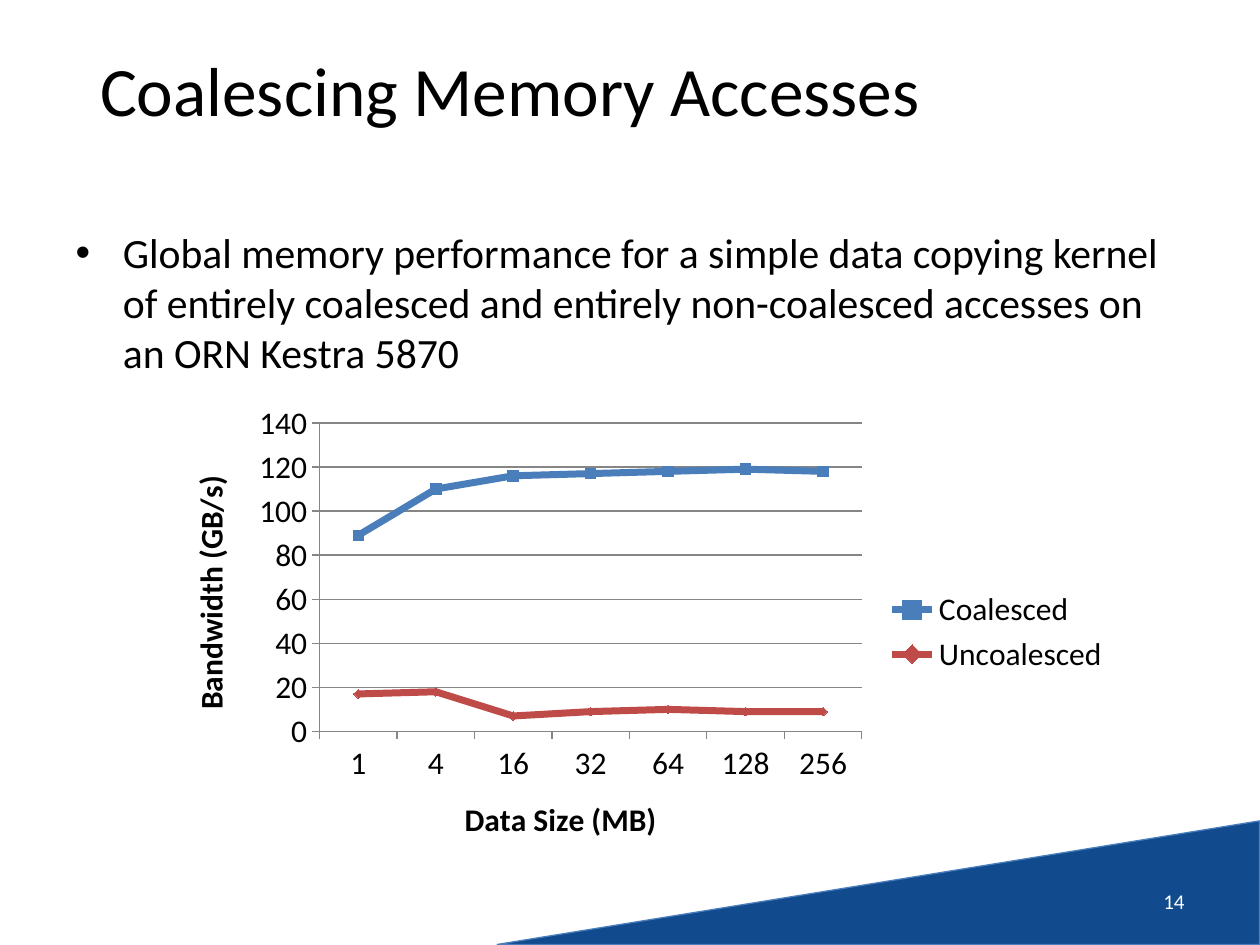
"""Build a slide with a line chart of coalesced and uncoalesced memory bandwidth."""
from lxml import etree
from pptx import Presentation
from pptx.chart.data import CategoryChartData
from pptx.dml.color import RGBColor
from pptx.enum.chart import XL_CHART_TYPE as CT, XL_LEGEND_POSITION as LP
from pptx.enum.chart import XL_MARKER_STYLE as MS, XL_TICK_MARK as TM
from pptx.enum.shapes import MSO_SHAPE
from pptx.enum.text import MSO_ANCHOR, MSO_AUTO_SIZE, PP_ALIGN
from pptx.oxml.ns import qn
from pptx.util import Pt

FONT = "Calibri"
TITLE = "Coalescing Memory Accesses"
BODY = ("Global memory performance for a simple data copying kernel of entirely "
        "coalesced and entirely non-coalesced accesses on an ORN Kestra 5870")
PAGE = "14"
SIZES = ["1", "4", "16", "32", "64", "128", "256"]
SERIES = [
    ("Coalesced", [89, 110, 116, 117, 118, 119, 118], "4A7EBB", MS.SQUARE, 6),
    ("Uncoalesced", [17, 18, 7, 9, 10, 9, 9], "BE4B48", MS.DIAMOND, 5),
]
PLOT = {"x": 0.165, "y": 0.06, "w": 0.564, "h": 0.65}


def rgb(value):
    return RGBColor.from_string(value)


def set_font(font, size, color="000000", bold=False):
    font.name, font.size, font.bold = FONT, Pt(size), bold
    font.color.rgb = rgb(color)


def place(sp, left, top, width, height):
    sp.left, sp.top, sp.width, sp.height = map(Pt, (left, top, width, height))


def write(sp, text, size, align, anchor, color="000000"):
    tf = sp.text_frame
    tf.text, tf.word_wrap, tf.auto_size = text, True, MSO_AUTO_SIZE.NONE
    tf.vertical_anchor = anchor
    p = tf.paragraphs[0]
    p.alignment, p.space_before = align, Pt(0)
    set_font(p.font, size, color)


def add_corner(s):
    sp = s.shapes.add_shape(MSO_SHAPE.RIGHT_TRIANGLE, Pt(466.6), Pt(286.6), Pt(70.6), Pt(435.6))
    sp.rotation = 270
    sp.shadow.inherit = False
    sp.fill.solid()
    sp.fill.fore_color.rgb = rgb("114B8E")
    sp.line.color.rgb = rgb("4B7EBC")
    sp.line.width = Pt(0.75)


def style_axis(axis, title):
    axis.major_tick_mark, axis.minor_tick_mark = TM.OUTSIDE, TM.NONE
    axis.format.line.color.rgb = rgb("868686")
    set_font(axis.tick_labels.font, 18)
    tf = axis.axis_title.text_frame
    tf.text = title
    set_font(tf.paragraphs[0].font, 18, bold=True)


def add_chart(s):
    data = CategoryChartData()
    data.categories = SIZES
    for name, values, *_ in SERIES:
        data.add_series(name, values)
    chart = s.shapes.add_chart(CT.LINE_MARKERS, Pt(92), Pt(225.4), Pt(549.4), Pt(271.4), data).chart
    chart.has_title = False
    set_font(chart.font, 18)
    chart.has_legend = True
    chart.legend.position = LP.RIGHT
    chart.legend.include_in_layout = False
    set_font(chart.legend.font, 18)

    style_axis(chart.category_axis, "Data Size (MB)")
    axis = chart.value_axis
    style_axis(axis, "Bandwidth (GB/s)")
    axis.minimum_scale, axis.maximum_scale, axis.major_unit = 0, 140, 20
    axis.has_major_gridlines = True
    axis.major_gridlines.format.line.color.rgb = rgb("868686")

    plot = chart.plots[0]
    plot.vary_by_categories = False
    for series, (_, _, color, marker, size) in zip(plot.series, SERIES):
        series.smooth = False
        series.format.line.color.rgb = rgb(color)
        series.format.line.width = Pt(4)
        series.marker.style, series.marker.size = marker, size
        for fmt in (series.marker.format.fill, series.marker.format.line.fill):
            fmt.solid()
            fmt.fore_color.rgb = rgb(color)

    area = chart._chartSpace.find(".//" + qn("c:plotArea"))
    layout = area.find(qn("c:layout"))
    if layout is None:
        layout = etree.Element(qn("c:layout"))
        area.insert(0, layout)
    manual = etree.SubElement(layout, qn("c:manualLayout"))
    settings = {"layoutTarget": "inner", "xMode": "edge", "yMode": "edge", **PLOT}
    for tag, value in settings.items():
        etree.SubElement(manual, qn("c:" + tag)).set("val", str(value))


def main():
    prs = Presentation()
    prs.slide_width, prs.slide_height = Pt(720), Pt(540)
    s = prs.slides.add_slide(prs.slide_layouts[1])
    add_corner(s)

    title, body = s.placeholders
    place(title, 36, 6, 511, 90)
    write(title, TITLE, 39.6, PP_ALIGN.CENTER, MSO_ANCHOR.MIDDLE)
    place(body, 36, 126, 648, 81)
    write(body, BODY, 23.8, PP_ALIGN.LEFT, MSO_ANCHOR.TOP)

    number = s.shapes.add_textbox(Pt(516), Pt(500.5), Pt(168), Pt(28.8))
    write(number, PAGE, 12, PP_ALIGN.RIGHT, MSO_ANCHOR.MIDDLE, "FFFFFF")
    add_chart(s)
    prs.save("out.pptx")


if __name__ == "__main__":
    main()
